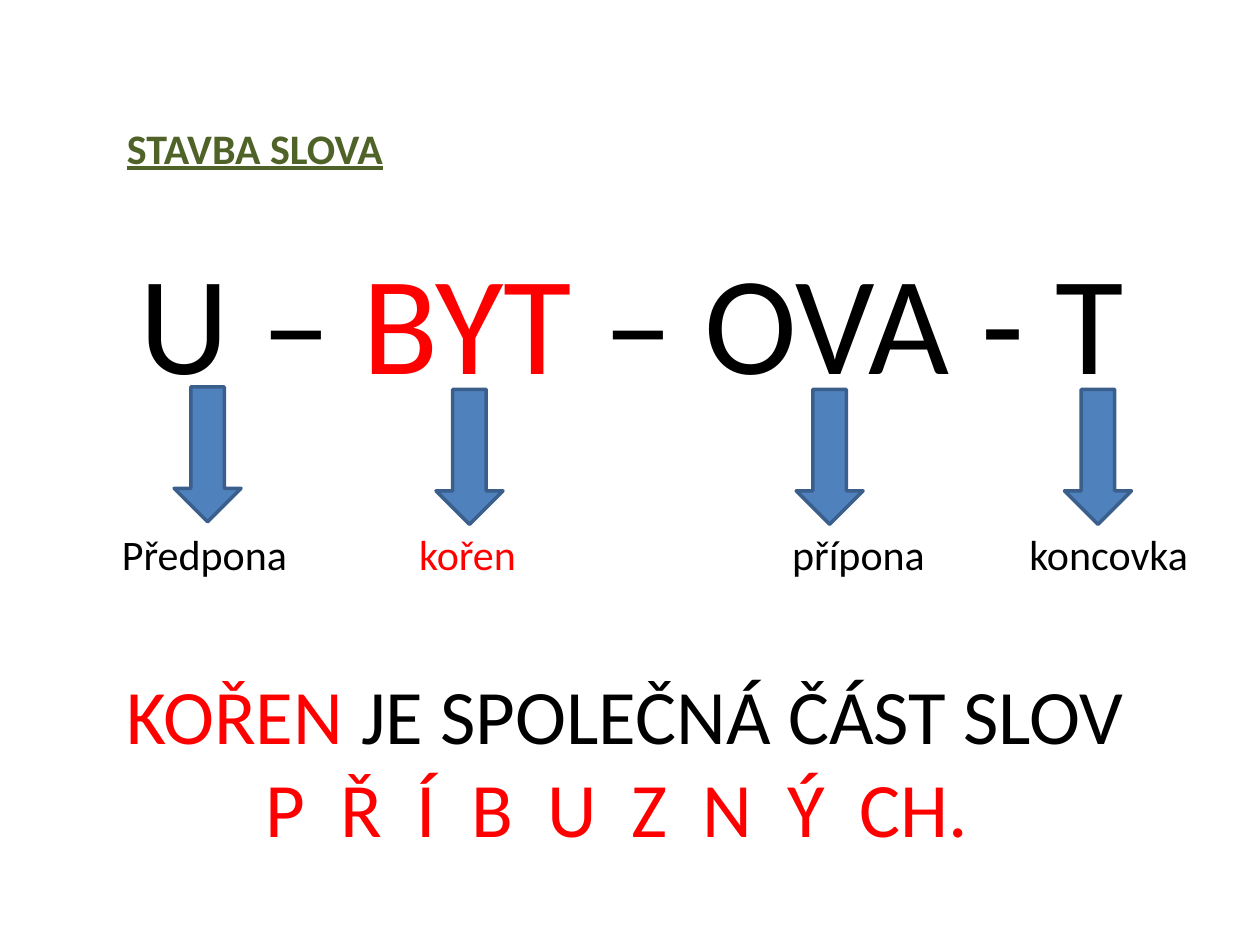
"""Build a slide on the parts of a Czech word."""
from dataclasses import dataclass

from lxml.etree import SubElement
from pptx import Presentation
from pptx.dml.color import RGBColor
from pptx.enum.shapes import MSO_SHAPE
from pptx.oxml.ns import qn
from pptx.slide import Slide
from pptx.util import Cm, Pt

BLACK, RED, GREEN = "000000", "FF0000", "4F6228"
BLUE, DARK_BLUE = "4F81BD", "3A5F8C"


@dataclass(frozen=True)
class Span:
    """A run of text in one colour."""
    text: str
    color: str = BLACK
    strong: bool = False


@dataclass(frozen=True)
class Line:
    """A paragraph with its indent and tab stops in centimetres."""
    spans: tuple[Span, ...]
    indent: float = 0
    tabs: tuple[float, ...] = ()


@dataclass(frozen=True)
class TextBlock:
    """A text box with its frame in centimetres."""
    frame: tuple[float, float, float, float]
    size: int
    lines: tuple[Line, ...]
    wrap: bool = False


@dataclass(frozen=True)
class Arrow:
    """The top left corner of a down arrow in centimetres."""
    left: float
    top: float = 7.85


BLOCKS = (
    TextBlock((2.31, 2.34, 5.72, 1.27), 24,
              (Line((Span("STAVBA SLOVA", GREEN, True),)),)),
    TextBlock((2.57, 4.6, 20.55, 3.68), 80,
              (Line((Span("U – "), Span("BYT", RED), Span(" – OVA - T"))),)),
    TextBlock((2.21, 10.52, 22.3, 1.27), 24,
              (Line((Span("Předpona\t"), Span("kořen", RED),
                     Span("\tpřípona\tkoncovka")),
                    tabs=(5.99, 13.51, 18.29)),), wrap=True),
    TextBlock((2.31, 13.34, 20.83, 4.01), 44,
              (Line((Span("KOŘEN ", RED), Span("JE SPOLEČNÁ ČÁST SLOV"))),
               Line((Span("P  Ř  Í  B  U  Z  N  Ý  CH.", RED),), indent=2.8))),
)
ARROWS = (Arrow(3.51, 7.8), Arrow(8.79), Arrow(16.05), Arrow(21.46))


def rgb(color: str) -> RGBColor:
    """Turn a hex string into a colour."""
    return RGBColor.from_string(color)


def format_line(p, line: Line) -> None:
    """Set the indent and tab stops of a paragraph."""
    pPr = p._p.get_or_add_pPr()
    if line.indent:
        pPr.set("marL", str(Cm(line.indent)))
    if line.tabs:
        tab_list = SubElement(pPr, qn("a:tabLst"))
        for pos in line.tabs:
            SubElement(tab_list, qn("a:tab"), pos=str(Cm(pos)), algn="l")


def add_block(s: Slide, block: TextBlock) -> None:
    """Draw a text box run by run."""
    tf = s.shapes.add_textbox(*map(Cm, block.frame)).text_frame
    tf.word_wrap = block.wrap
    for i, line in enumerate(block.lines):
        p = tf.add_paragraph() if i else tf.paragraphs[0]
        format_line(p, line)
        for span in line.spans:
            r = p.add_run()
            r.text = span.text
            r.font.name = "Calibri"
            r.font.size = Pt(block.size)
            r.font.bold = r.font.underline = span.strong
            r.font.color.rgb = rgb(span.color)


def add_arrow(s: Slide, arrow: Arrow) -> None:
    """Draw a blue arrow from a word part to its name."""
    sp = s.shapes.add_shape(MSO_SHAPE.DOWN_ARROW, Cm(arrow.left),
                            Cm(arrow.top), Cm(1.35), Cm(2.72))
    sp.shadow.inherit = False
    sp.fill.solid()
    sp.fill.fore_color.rgb = rgb(BLUE)
    sp.line.color.rgb = rgb(DARK_BLUE)
    sp.line.width = Pt(2)


def main() -> None:
    """Build and save the slide."""
    prs = Presentation()
    prs.slide_width, prs.slide_height = Cm(25.4), Cm(19.05)
    s = prs.slides.add_slide(prs.slide_layouts[6])
    for block in BLOCKS:
        add_block(s, block)
    for arrow in ARROWS:
        add_arrow(s, arrow)
    prs.save("out.pptx")


if __name__ == "__main__":
    main()
